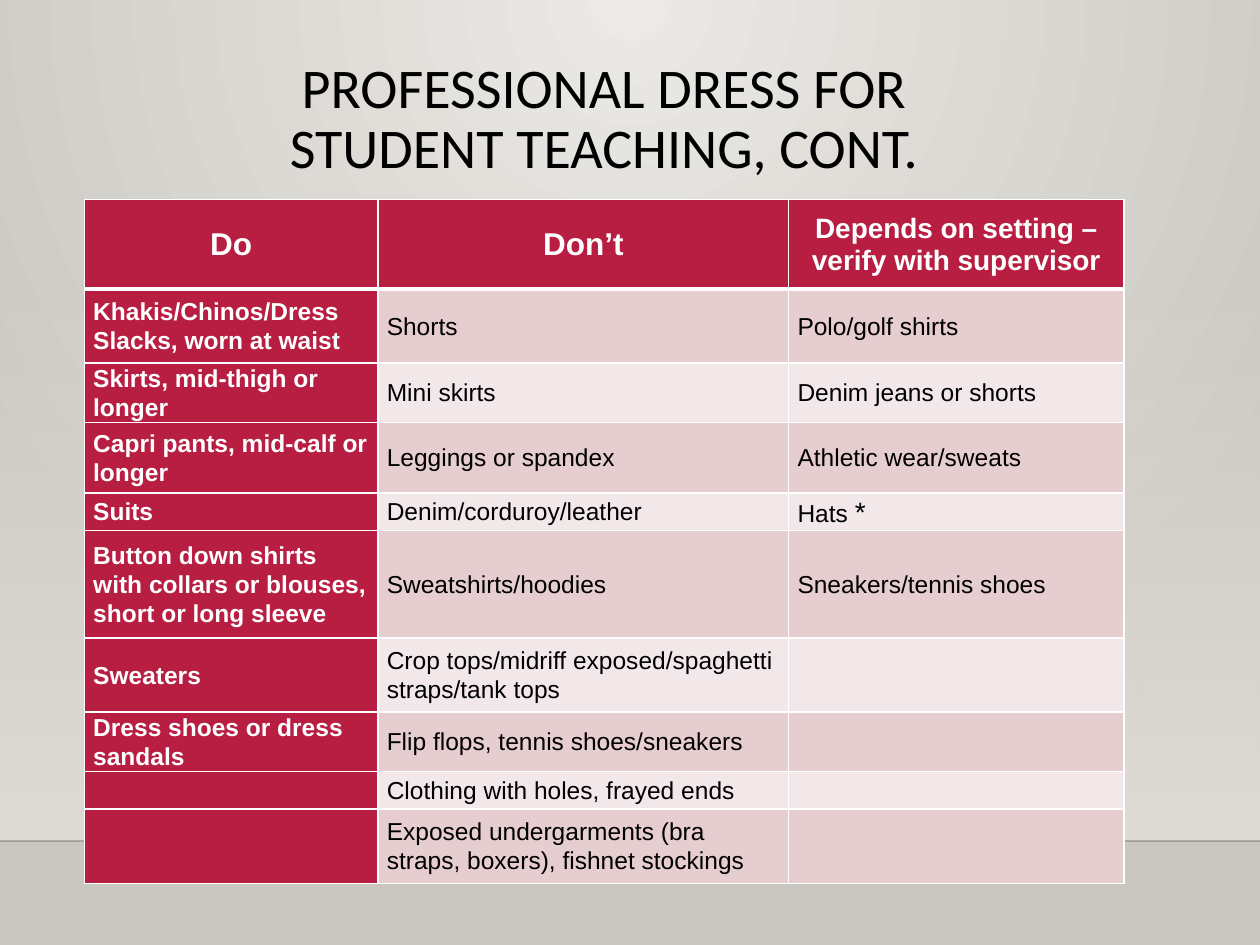
from lxml.etree import SubElement
from pptx import Presentation
from pptx.dml.color import RGBColor
from pptx.enum.shapes import MSO_CONNECTOR, MSO_SHAPE
from pptx.enum.text import MSO_ANCHOR, PP_ALIGN
from pptx.oxml import parse_xml
from pptx.oxml.ns import nsdecls, qn
from pptx.util import Inches, Pt

RED = RGBColor(0xB7, 0x1E, 0x42)
ROSE = RGBColor(0xE6, 0xCD, 0xCF)
PALE = RGBColor(0xF3, 0xE8, 0xE9)
WHITE = RGBColor(0xFF, 0xFF, 0xFF)
BLACK = RGBColor(0, 0, 0)
INK = RGBColor(0, 0, 1)
GLOW = RGBColor(0xEC, 0xEA, 0xE7)
STONE = RGBColor(0xCA, 0xC7, 0xC1)
SAND = RGBColor(0xDF, 0xDB, 0xD5)

HEAD = ["Do", "Don’t", "Depends on setting – verify with supervisor"]
DRESS = [
    ["Khakis/Chinos/Dress Slacks, worn at waist", "Shorts", "Polo/golf shirts"],
    ["Skirts, mid-thigh or longer", "Mini skirts", "Denim jeans or shorts"],
    ["Capri pants, mid-calf or longer", "Leggings or spandex", "Athletic wear/sweats"],
    ["Suits", "Denim/corduroy/leather", "Hats *"],
    ["Button down shirts with collars or blouses, short or long sleeve",
     "Sweatshirts/hoodies", "Sneakers/tennis shoes"],
    ["Sweaters", "Crop tops/midriff exposed/spaghetti straps/tank tops", ""],
    ["Dress shoes or dress sandals", "Flip flops, tennis shoes/sneakers", ""],
    ["", "Clothing with holes, frayed ends", ""],
    ["", "Exposed undergarments (bra straps, boxers), fishnet stockings", ""],
]
WIDTHS = [2.33, 3.26, 2.66]
HEIGHTS = [0.71, 0.59, 0.47, 0.56, 0.3, 0.85, 0.59, 0.47, 0.3, 0.59]


def fade(color, share):
    """Give the colour element an opacity in percent."""
    SubElement(color, qn("a:alpha")).set("val", str(share * 1000))


def blend(fill, first, last):
    fill.gradient()
    for stop, tone, place in zip(fill.gradient_stops, (first, last), (0, 1)):
        stop.color.rgb = tone
        stop.position = place


class Deck:
    font = "Arial"
    size = Pt(14)

    def __init__(self):
        self.show = Presentation()
        self.show.slide_width, self.show.slide_height = Inches(10), Inches(7.5)
        self.slide = self.show.slides.add_slide(self.show.slide_layouts[5])

    def x(self, share):
        return round(self.show.slide_width * share)

    def y(self, share):
        return round(self.show.slide_height * share)

    def box(self, left, top, width, height):
        return self.x(left), self.y(top), self.x(width), self.y(height)

    def backdrop(self):
        """Radial glow that starts at the top centre."""
        fill = self.slide.background.fill
        blend(fill, GLOW, STONE)
        line = next(self.slide.element.iter(qn("a:lin")))
        line.getparent().replace(line, parse_xml(
            f'<a:path {nsdecls("a")} path="circle">'
            '<a:fillToRect l="43000" r="43000" b="100000"/></a:path>'))

    def haze(self, *area):
        """Band that grows from clear to solid."""
        band = self.slide.shapes.add_shape(MSO_SHAPE.RECTANGLE, *self.box(*area))
        band.shadow.inherit = False
        band.line.fill.background()
        blend(band.fill, SAND, SAND)
        band.fill.gradient_angle = 270
        fade(next(band.element.spPr.iter(qn("a:srgbClr"))), 0)

    def rule(self, top):
        y = self.y(top)
        line = self.slide.shapes.add_connector(
            MSO_CONNECTOR.STRAIGHT, 0, y, self.x(1), y)
        line.line.color.rgb = INK
        line.line.width = Pt(1)
        props = line.element.spPr
        fade(next(props.iter(qn("a:srgbClr"))), 20)
        SubElement(props, qn("a:effectLst"))

    def title(self, text, *area):
        shape = self.slide.shapes.title
        shape.left, shape.top, shape.width, shape.height = self.box(*area)
        frame = shape.text_frame
        frame.text = text
        frame.vertical_anchor = MSO_ANCHOR.MIDDLE
        para = frame.paragraphs[0]
        para.alignment = PP_ALIGN.CENTER
        para.line_spacing = 0.9
        para.font.name, para.font.size = "Calibri", Pt(32)
        para.font.color.rgb = BLACK

    def edge(self, cell, low):
        """White borders, with the bottom one low points wide."""
        props = cell._tc.get_or_add_tcPr()
        for spot, (side, width) in enumerate(
                {"L": 1, "R": 1, "T": 1, "B": low}.items()):
            props.insert(spot, parse_xml(
                f'<a:ln{side} {nsdecls("a")} w="{Pt(width)}"><a:solidFill>'
                f'<a:srgbClr val="{WHITE}"/></a:solidFill></a:ln{side}>'))

    def cell(self, cell, text, fill, size, head):
        cell.fill.solid()
        cell.fill.fore_color.rgb = fill
        cell.vertical_anchor = MSO_ANCHOR.MIDDLE
        cell.margin_left = cell.margin_right = Inches(0.07)
        cell.margin_top = cell.margin_bottom = 0
        para = cell.text_frame.paragraphs[0]
        para.alignment = PP_ALIGN.CENTER if head else PP_ALIGN.LEFT
        para.line_spacing = 1.05
        para.font.name, para.font.size = self.font, size
        para.font.bold = fill == RED
        para.font.color.rgb = WHITE if fill == RED else BLACK
        stem, star, _ = text.partition("*")
        if stem:
            para.add_run().text = stem
        if star:
            run = para.add_run()
            run.text = star
            run.font.size = Pt(16)

    def table(self, rows, *area):
        grid = self.slide.shapes.add_table(
            len(rows), len(WIDTHS), *self.box(*area)).table
        grid.first_col = True
        for col, width in zip(grid.columns, WIDTHS):
            col.width = Inches(width)
        for r, (row, height) in enumerate(zip(rows, HEIGHTS)):
            grid.rows[r].height = Inches(height)
            head = r == 0
            for c, text in enumerate(row):
                fill = RED if head or c == 0 else ROSE if r % 2 else PALE
                size = Pt(16 if c == 2 else 18) if head else self.size
                self.cell(grid.cell(r, c), text, fill, size, head)
                self.edge(grid.cell(r, c), 3 if head else 1)


def main():
    deck = Deck()
    deck.backdrop()
    deck.haze(0, 0.29, 1, 0.6)
    deck.rule(0.89)
    deck.title("PROFESSIONAL DRESS FOR\vSTUDENT TEACHING, CONT.",
               0.067, 0.044, 0.825, 0.167)
    deck.table([HEAD, *DRESS], 0.067, 0.211, 0.825, 0.724)
    deck.show.save("out.pptx")


if __name__ == "__main__":
    main()
